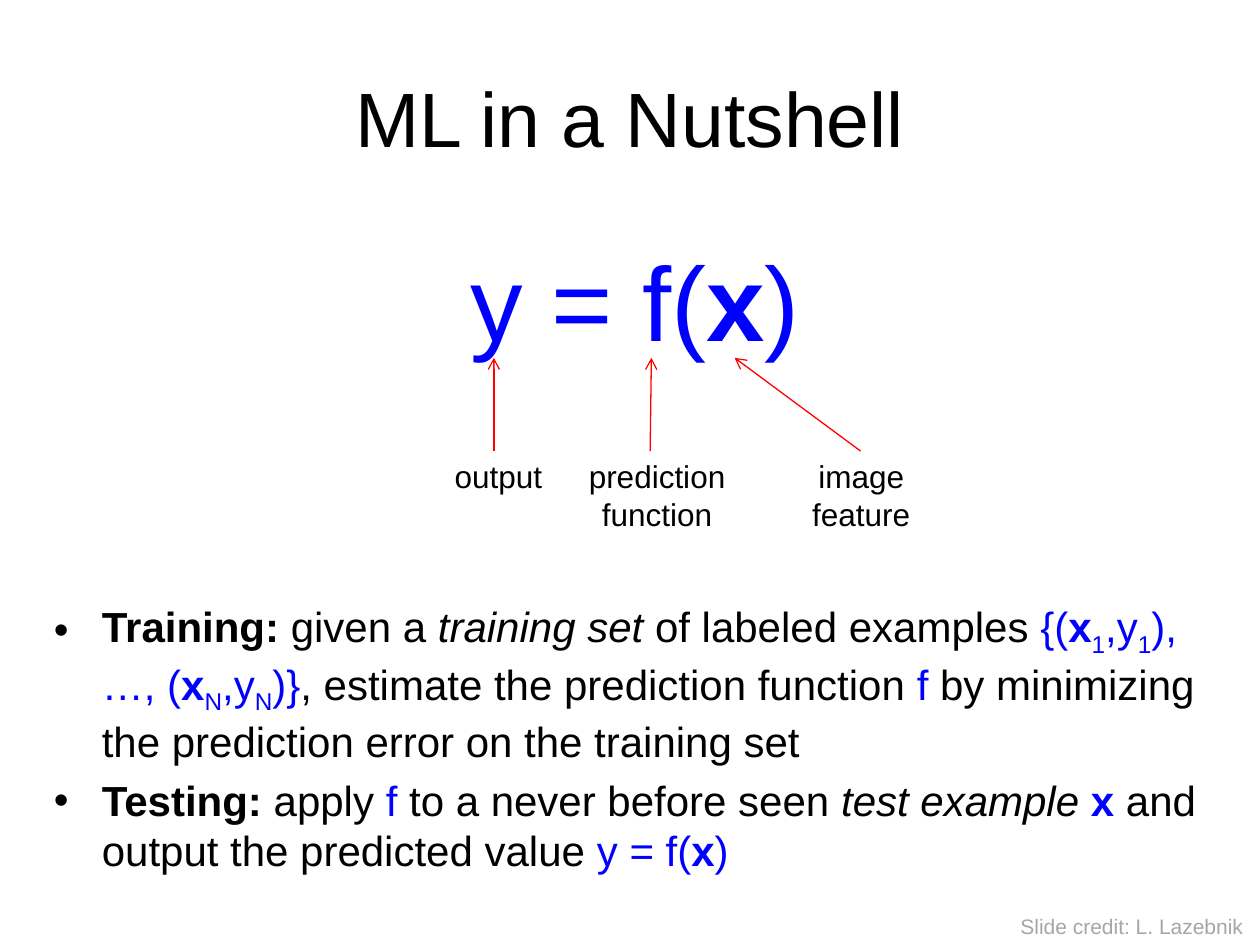
from lxml import etree
from pptx import Presentation
from pptx.dml.color import RGBColor
from pptx.enum.shapes import MSO_CONNECTOR
from pptx.enum.text import MSO_ANCHOR, PP_ALIGN
from pptx.oxml.ns import qn
from pptx.util import Inches, Pt

W, H = 10, 7.5
LEFT, CENTER = PP_ALIGN.LEFT, PP_ALIGN.CENTER
TOP, MIDDLE = MSO_ANCHOR.TOP, MSO_ANCHOR.MIDDLE
STRAIGHT = MSO_CONNECTOR.STRAIGHT
BLACK, BLUE, RED, GREY = "000000", "0000FF", "FF0000", "A6A6A6"
BODY_X, BODY_W = 0.33, 9.42
LABEL_Y, INDENT = 3.58, 0.38

FORMULA = [("y = f(", "m"), ("x", "mb"), (")", "m")]
TRAINING = [
    ("Training: ", "b"), ("given a ", ""), ("training set ", "i"),
    ("of labeled examples ", ""), ("{(", "m"), ("x", "mb"), ("1", "ms"),
    (",y", "m"), ("1", "ms"), ("), …, (", "m"), ("x", "mb"), ("N", "ms"),
    (",y", "m"), ("N", "ms"), (")}", "m"),
    (", estimate the prediction function ", ""), ("f ", "m"),
    ("by minimizing the prediction error on the training set", ""),
]
TESTING = [
    ("Testing:", "b"), (" apply ", ""), ("f", "m"),
    (" to a never before seen ", ""), ("test example ", "i"), ("x", "mb"),
    (" and output the predicted value ", ""), *FORMULA,
]
LABELS = [
    ("output", 3.51, 0.9, LEFT, False),
    ("prediction function", 4.18, 2.07, CENTER, True),
    ("image feature", 6.01, 1.65, CENTER, True),
]
ARROWS = [(3.92, 3.92), (5.16, 5.17), (6.83, 5.83)]


def color(value):
    """Turn a hex string into a colour."""
    return RGBColor.from_string(value)


def add_runs(p, runs, size, base):
    """Add styled runs: m maths colour, b bold, i italic, s subscript."""
    for text, style in runs:
        r = p.add_run()
        r.text = text
        r.font.name, r.font.size = "Arial", Pt(size)
        r.font.bold, r.font.italic = "b" in style, "i" in style
        r.font.color.rgb = color(BLUE if "m" in style else base)
        if "s" in style:
            r.font._element.set("baseline", "-25000")


def add_bullet(p):
    """Give a paragraph a hanging bullet."""
    pPr = p._p.get_or_add_pPr()
    pPr.set("marL", str(Inches(INDENT)))
    pPr.set("indent", str(-Inches(INDENT)))
    etree.SubElement(pPr, qn("a:buFont")).set("typeface", "Arial")
    etree.SubElement(pPr, qn("a:buChar")).set("char", "•")


def add_text(s, box, paragraphs, size, base=BLACK, align=LEFT, anchor=TOP,
             wrap=True, bullets=False):
    """Add a text box holding one paragraph per list of runs."""
    tf = s.shapes.add_textbox(*map(Inches, box)).text_frame
    tf.word_wrap, tf.vertical_anchor = wrap, anchor
    for i, runs in enumerate(paragraphs):
        p = tf.add_paragraph() if i else tf.paragraphs[0]
        p.alignment = align
        p.space_before = Pt(size * 0.2 if i else 0)
        if bullets:
            add_bullet(p)
        add_runs(p, runs, size, base)


def add_arrow(s, x1, y1, x2, y2):
    """Add a thin red line with an open arrowhead at its end."""
    line = s.shapes.add_connector(STRAIGHT, *map(Inches, (x1, y1, x2, y2)))
    line.line.color.rgb, line.line.width = color(RED), Pt(0.75)
    etree.SubElement(line.line._get_or_add_ln(), qn("a:tailEnd")).set("type", "arrow")
    etree.SubElement(line._element.spPr, qn("a:effectLst"))


def main():
    """Build the slide and save it."""
    prs = Presentation()
    prs.slide_width, prs.slide_height = Inches(W), Inches(H)
    s = prs.slides.add_slide(prs.slide_layouts[6])
    add_text(s, (0.05 * W, 0.04 * H, 0.9 * W, 1.25), [[("ML in a Nutshell", "")]],
             44, align=CENTER, anchor=MIDDLE)
    add_text(s, (BODY_X, 1.83, BODY_W, 1.05), [FORMULA], 60, align=CENTER)
    for x_from, x_to in ARROWS:
        add_arrow(s, x_from, LABEL_Y, x_to, 2.84)
    for text, x, w, align, wrap in LABELS:
        add_text(s, (x, LABEL_Y, w, 0.71 if wrap else 0.4), [[(text, "")]], 18,
                 align=align, wrap=wrap)
    add_text(s, (BODY_X, 4.72, BODY_W, 1.98), [TRAINING, TESTING], 24, bullets=True)
    add_text(s, (0.8 * W, 0.96 * H, 1.98, 0.3), [[("Slide credit: L. Lazebnik", "")]],
             12, GREY, wrap=False)
    prs.save("out.pptx")


if __name__ == "__main__":
    main()
